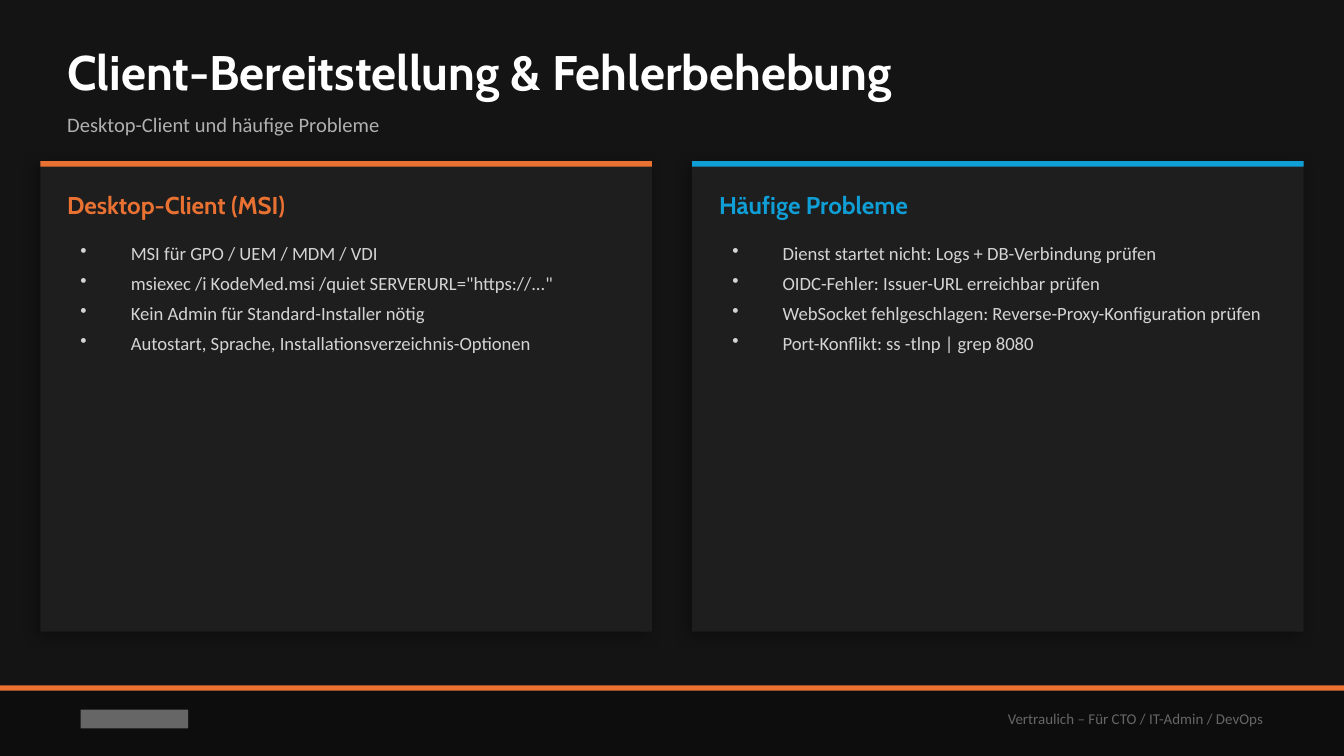
from dataclasses import dataclass

from lxml.etree import SubElement
from pptx import Presentation
from pptx.dml.color import RGBColor
from pptx.enum.shapes import MSO_SHAPE
from pptx.enum.text import MSO_ANCHOR, PP_ALIGN
from pptx.oxml import parse_xml
from pptx.oxml.ns import nsdecls, qn
from pptx.util import Pt

PX = 4572  # EMU per px, 200 px to the inch
W, H = 2000, 1125


@dataclass(frozen=True)
class Theme:
    background: str = "141414"
    footer: str = "0D0D0D"
    card: str = "1E1E1E"
    orange: str = "E97132"
    blue: str = "0F9ED5"
    white: str = "FFFFFF"
    subtitle: str = "B0B0B0"
    body: str = "D4D4D4"
    muted: str = "666666"
    heading_font: str = "Cabin"
    body_font: str = "Calibri"
    title_size: int = 26
    card_title_size: int = 13
    subtitle_size: int = 11
    bullet_size: int = 10
    note_size: int = 8


T = Theme()

SHADOW = (
    f'<a:effectLst {nsdecls("a")}>'
    '<a:outerShdw blurRad="101600" dist="38100" dir="8100000" algn="bl" rotWithShape="0">'
    '<a:srgbClr val="000000"><a:alpha val="35000"/></a:srgbClr>'
    '</a:outerShdw></a:effectLst>'
)

prs = Presentation()
prs.slide_width, prs.slide_height = W * PX, H * PX
s = prs.slides.add_slide(prs.slide_layouts[6])
s.background.fill.solid()
s.background.fill.fore_color.rgb = RGBColor.from_string(T.background)


def add_rect(x, y, w, h, color):
    sp = s.shapes.add_shape(MSO_SHAPE.RECTANGLE, x * PX, y * PX, w * PX, h * PX)
    sp.shadow.inherit = False
    sp.fill.solid()
    sp.fill.fore_color.rgb = RGBColor.from_string(color)
    sp.line.fill.background()
    return sp


def add_line_of_text(x, y, w, h, text, size, color, font, inset=False, align=PP_ALIGN.LEFT):
    tf = s.shapes.add_textbox(x * PX, y * PX, w * PX, h * PX).text_frame
    tf.word_wrap = True
    tf.vertical_anchor = MSO_ANCHOR.MIDDLE
    if not inset:
        tf.margin_left = tf.margin_top = tf.margin_right = tf.margin_bottom = 0
    tf.text = text
    p = tf.paragraphs[0]
    p.alignment = align
    r = p.runs[0]
    r.font.size = Pt(size)
    r.font.name = font
    r.font.bold = font == T.heading_font
    r.font.color.rgb = RGBColor.from_string(color)


# Footer
add_rect(0, 1020, W, H - 1020, T.footer)
add_rect(0, 1020, W, 8, T.orange)
add_rect(120, 1056, 160, 28, T.muted)
add_line_of_text(1100, 1030, 800, 80, "Vertraulich – Für CTO / IT-Admin / DevOps",
                 T.note_size, T.muted, T.body_font, inset=True, align=PP_ALIGN.RIGHT)

# Title
add_line_of_text(100, 50, 1800, 110, "Client-Bereitstellung & Fehlerbehebung",
                 T.title_size, T.white, T.heading_font)
add_line_of_text(100, 150, 1800, 70, "Desktop-Client und häufige Probleme",
                 T.subtitle_size, T.subtitle, T.body_font)

# Cards
CARD_W, CARD_H, MARGIN, GAP, TOP, PAD = 910, 700, 60, 60, 240, 40
cards = [
    ("Desktop-Client (MSI)", T.orange, [
        "MSI für GPO / UEM / MDM / VDI",
        'msiexec /i KodeMed.msi /quiet SERVERURL="https://..."',
        "Kein Admin für Standard-Installer nötig",
        "Autostart, Sprache, Installationsverzeichnis-Optionen",
    ]),
    ("Häufige Probleme", T.blue, [
        "Dienst startet nicht: Logs + DB-Verbindung prüfen",
        "OIDC-Fehler: Issuer-URL erreichbar prüfen",
        "WebSocket fehlgeschlagen: Reverse-Proxy-Konfiguration prüfen",
        "Port-Konflikt: ss -tlnp | grep 8080",
    ]),
]
for i, (heading, accent, bullets) in enumerate(cards):
    x = MARGIN + i * (CARD_W + GAP)
    inner_x, inner_w = x + PAD, CARD_W - 2 * PAD
    card = add_rect(x, TOP, CARD_W, CARD_H, T.card)
    effects = card._element.spPr.find(qn("a:effectLst"))
    effects.getparent().replace(effects, parse_xml(SHADOW))
    add_rect(x, TOP, CARD_W, 8, accent)
    add_line_of_text(inner_x, TOP + 30, inner_w, 70, heading,
                     T.card_title_size, accent, T.heading_font)

    tf = s.shapes.add_textbox(inner_x * PX, (TOP + 110) * PX, inner_w * PX, 560 * PX).text_frame
    tf.word_wrap = True
    for n, text in enumerate(bullets):
        p = tf.add_paragraph() if n else tf.paragraphs[0]
        p.text = text
        p.space_after = Pt(4)
        pPr = p._p.get_or_add_pPr()
        pPr.set("marL", str(75 * PX))
        pPr.set("indent", str(-75 * PX))
        SubElement(pPr, qn("a:buSzPct"), val="100000")
        SubElement(pPr, qn("a:buChar"), char="•")
        r = p.runs[0]
        r.font.size = Pt(T.bullet_size)
        r.font.name = T.body_font
        r.font.color.rgb = RGBColor.from_string(T.body)

prs.save("out.pptx")
